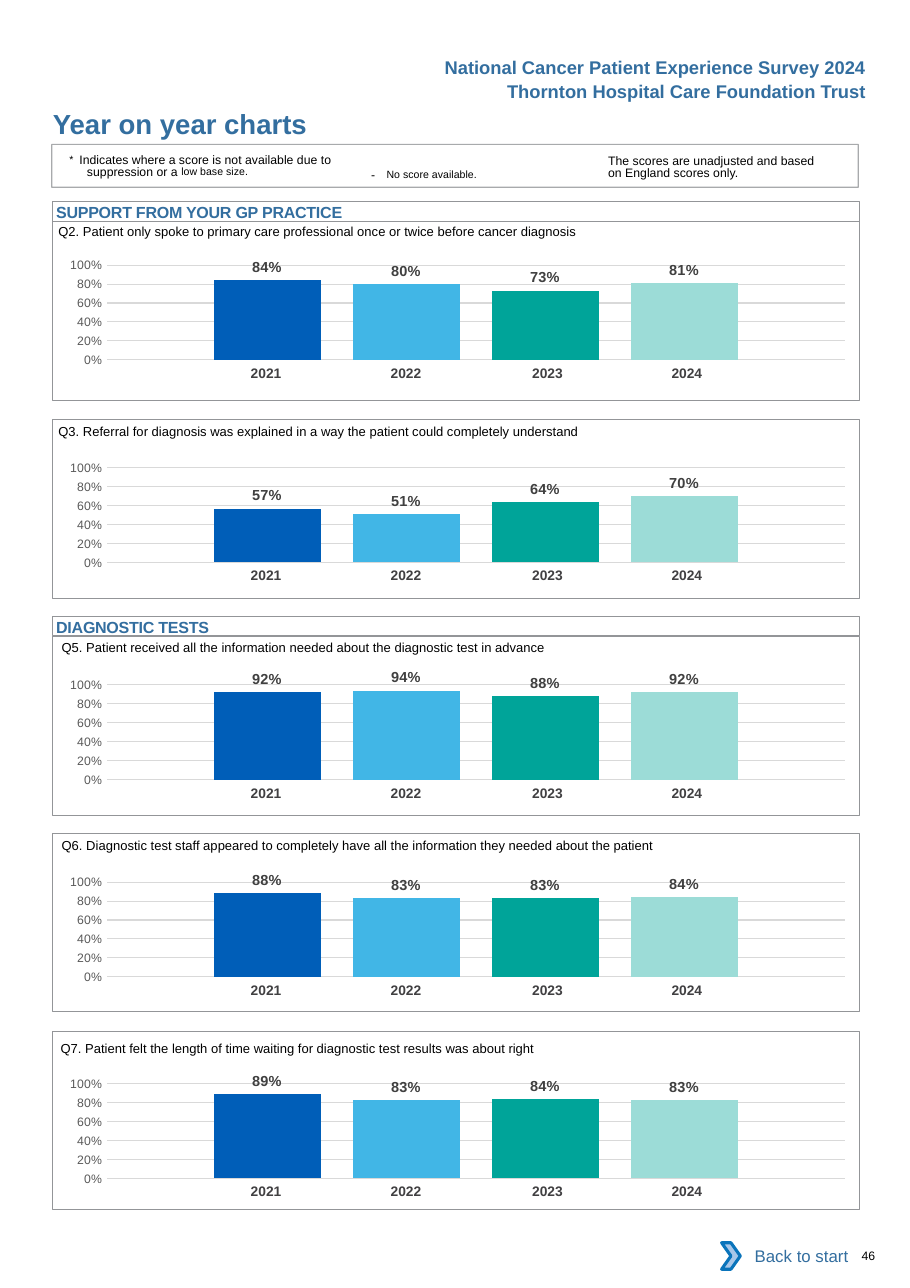
from pptx import Presentation
from pptx.chart.data import CategoryChartData
from pptx.dml.color import RGBColor
from pptx.enum import chart as charts, shapes, text
from pptx.oxml import parse_xml
from pptx.oxml.ns import nsdecls, qn
from pptx.util import Inches, Pt
from lxml import etree

COLOURS = {"heading": "336E9F", "body": "000000", "frame": "939598", "year": "414042",
           "axis": "595959", "score": "404040", "grid": "D9D9D9", "paper": "FFFFFF",
           "arrow": "A8C7E9", "arrow edge": "0A74BB"}
YEARS = {"2021": "005EB8", "2022": "41B6E6", "2023": "00A499", "2024": "9CDCD7"}
YEAR_WIDTHS = [1.27, 1.27, 1.34, 1.27]
YEAR_RIGHT_MARGINS = [0, 0, 0.04, 0.12]
PLOT = {"x": 0.079, "y": 0.145, "w": 0.915, "h": 0.666}
PANEL_LEFT, PANEL_WIDTH, PANEL_HEIGHT = 0.48, 7.32, 1.62
CHART_BOX = (0.39, 7.32, 1.29)
YEARS_LEFT, YEARS_DROP, YEARS_HEIGHT = 1.73, 1.05, 0.27
NO_GRID_STYLE = "{2D5ABB26-0587-4C30-8999-92F81FD0307C}"

SECTIONS = [("SUPPORT FROM YOUR GP PRACTICE", 1.83), ("DIAGNOSTIC TESTS", 5.59)]
QUESTIONS = [
    ("Q2. Patient only spoke to primary care professional once or twice before cancer diagnosis",
     (0.53, 1.94), 2.01, 2.22, [0.84, 0.80, 0.73, 0.81]),
    ("Q3. Referral for diagnosis was explained in a way the patient could completely understand",
     (0.53, 3.75), 3.81, 4.06, [0.57, 0.51, 0.64, 0.70]),
    ("Q5. Patient received all the information needed about the diagnostic test in advance",
     (0.56, 5.71), 5.78, 6.03, [0.92, 0.94, 0.88, 0.92]),
    ("Q6. Diagnostic test staff appeared to completely have all the information they needed "
     "about the patient", (0.56, 7.51), 7.56, 7.82, [0.88, 0.83, 0.83, 0.84]),
    ("Q7. Patient felt the length of time waiting for diagnostic test results was about right",
     (0.55, 9.35), 9.36, 9.65, [0.89, 0.83, 0.84, 0.83]),
]
RIGHT_HEADINGS = [("National Cancer Patient Experience Survey 2024", 0.46),
                  ("Thornton Hospital Care Foundation Trust", 0.68)]
SUPPRESSED_NOTE = [("*  ", 12, 3), ("Indicates where a score is not available due to "
                   "suppression or a ", 8, 0), ("low base size.", 12, 7)]
MISSING_NOTE = [("- ", 8, 0), ("No score available.", 12, 3)]
UNADJUSTED_NOTE = [("The scores are unadjusted and based on England scores only.", 8, 0)]


def rgb(name):
    """Return the colour for a palette name or a hex string."""
    return RGBColor.from_string(COLOURS.get(name, name))


def style(font, size, colour, bold=False):
    """Apply the page typeface to a font."""
    font.name, font.size, font.bold = "Arial", Pt(size), bold
    font.color.rgb = rgb(colour)


def write(frame, runs, colour="body", bold=False, align=text.PP_ALIGN.LEFT,
          margins=(0, 0, 0, 0), leading=None):
    """Fill a text frame with one paragraph of (text, size, raise) runs."""
    frame.word_wrap = True
    frame.margin_left, frame.margin_top, frame.margin_right, frame.margin_bottom = map(
        Inches, margins)
    line = frame.paragraphs[0]
    line.alignment = align
    if leading:
        line.line_spacing = Pt(leading)
    for words, size, lift in runs:
        run = line.add_run()
        run.text = words
        style(run.font, size, colour, bold)
        if lift:
            run.font._element.set("baseline", str(lift * 1000))
    return line


def add_words(slide, box, runs, **options):
    """Add a text box holding one paragraph."""
    return write(slide.shapes.add_textbox(*map(Inches, box)).text_frame, runs, **options)


def add_box(slide, box, edge=None, weight=0.5, fill=None, kind=shapes.MSO_SHAPE.RECTANGLE):
    """Add a flat preset shape."""
    shape = slide.shapes.add_shape(kind, *map(Inches, box))
    shape.shadow.inherit = False
    if fill:
        shape.fill.solid()
        shape.fill.fore_color.rgb = rgb(fill)
    else:
        shape.fill.background()
    if edge:
        shape.line.color.rgb = rgb(edge)
        shape.line.width = Pt(weight)
    else:
        shape.line.fill.background()
    return shape


def add_scores(slide, top, scores):
    """Add the column chart of one question."""
    data = CategoryChartData(number_format="0%")
    data.categories = ["1"]
    for year, score in zip(YEARS, scores):
        data.add_series(year, [score])
    left, width, height = CHART_BOX
    chart = slide.shapes.add_chart(charts.XL_CHART_TYPE.COLUMN_CLUSTERED, Inches(left),
                                   Inches(top), Inches(width), Inches(height), data).chart
    chart.has_legend = chart.has_title = False
    style(chart.font, 8, "axis")
    chart.category_axis.visible = False
    axis = chart.value_axis
    axis.minimum_scale, axis.maximum_scale, axis.major_unit = 0, 1, 0.2
    axis.major_tick_mark = axis.minor_tick_mark = charts.XL_TICK_MARK.NONE
    axis.format.line.fill.background()
    axis.major_gridlines.format.line.color.rgb = rgb("grid")
    axis.major_gridlines.format.line.width = Pt(0.75)
    axis.tick_labels.number_format, axis.tick_labels.number_format_is_linked = "0%", False
    style(axis.tick_labels.font, 8, "axis")
    plot = chart.plots[0]
    plot.gap_width, plot.overlap, plot.vary_by_categories = 200, -30, False
    for series, colour in zip(plot.series, YEARS.values()):
        series.format.fill.solid()
        series.format.fill.fore_color.rgb = rgb(colour)
        labels = series.data_labels
        labels.show_value = True
        labels.position = charts.XL_LABEL_POSITION.OUTSIDE_END
        labels.number_format, labels.number_format_is_linked = "0%", False
        style(labels.font, 9.5, "score", True)
    area = chart._chartSpace.find(".//" + qn("c:plotArea"))
    for old in area.findall(qn("c:layout")):
        area.remove(old)
    places = "".join(f'<c:{side}Mode val="edge"/>' for side in "xy")
    places += "".join(f'<c:{side} val="{share}"/>' for side, share in PLOT.items())
    area.insert(0, parse_xml(f'<c:layout {nsdecls("c")}><c:manualLayout><c:layoutTarget '
                             f'val="inner"/>{places}</c:manualLayout></c:layout>'))


def add_years(slide, top):
    """Add the row of years under a chart."""
    frame = slide.shapes.add_table(1, len(YEARS), Inches(YEARS_LEFT), Inches(top),
                                   Inches(sum(YEAR_WIDTHS)), Inches(YEARS_HEIGHT))
    table = frame.table
    table.first_row = table.horz_banding = False
    frame._element.find(".//" + qn("a:tableStyleId")).text = NO_GRID_STYLE
    for column, (year, width, right) in enumerate(zip(YEARS, YEAR_WIDTHS, YEAR_RIGHT_MARGINS)):
        table.columns[column].width = Inches(width)
        cell = table.cell(0, column)
        cell.fill.background()
        cell.margin_left, cell.margin_right = Inches(0.1), Inches(right)
        cell.margin_top = cell.margin_bottom = Inches(0.05)
        cell.text_frame.text = year
        line = cell.text_frame.paragraphs[0]
        line.alignment = text.PP_ALIGN.CENTER
        style(line.runs[0].font, 9, "year", True)


def main():
    """Build the year on year page."""
    deck = Presentation()
    deck.slide_width, deck.slide_height = Inches(8.26), Inches(11.69)
    slide = deck.slides.add_slide(deck.slide_layouts[6])

    for heading, top in RIGHT_HEADINGS:
        add_words(slide, (3.46, top, 4.5, 0.3), [(heading, 12, 0)], colour="heading", bold=True,
                  align=text.PP_ALIGN.RIGHT, margins=(0.1, 0.05, 0.1, 0.05))
    add_words(slide, (0.48, 0.97, 4.5, 0.3), [("Year on year charts", 18, 0)],
              colour="heading", bold=True)

    notes = add_box(slide, (0.47, 1.31, PANEL_WIDTH, 0.39), "frame", 0.75)
    tint = notes.line._ln.find(".//" + qn("a:srgbClr"))
    etree.SubElement(tint, qn("a:alpha")).set("val", "80000")
    suppressed = add_words(slide, (0.63, 1.38, 2.4, 0.27), SUPPRESSED_NOTE,
                           margins=(0, 0.03, 0, 0), leading=8.1)
    suppressed._p.get_or_add_pPr().set("marL", str(Inches(0.16)))
    suppressed._p.get_or_add_pPr().set("indent", str(-Inches(0.16)))
    missing = add_words(slide, (3.27, 1.41, 1.83, 0.24), MISSING_NOTE,
                        margins=(0.1, 0.05, 0.1, 0.05))
    missing.runs[0].font._element.set("spc", "260")
    add_words(slide, (5.52, 1.38, 2.01, 0.27), UNADJUSTED_NOTE, margins=(0, 0.03, 0, 0),
              leading=8.1)

    for section, top in SECTIONS:
        bar = add_box(slide, (PANEL_LEFT, top, PANEL_WIDTH, 0.18), "frame")
        bar.text_frame.vertical_anchor = text.MSO_ANCHOR.TOP
        label = write(bar.text_frame, [(section, 10.5, 0)], "heading", True,
                      margins=(0.03, 0.01, 0, 0))
        label.runs[0].font._element.set("spc", "-14")

    for question, (left, top), panel_top, chart_top, scores in QUESTIONS:
        add_words(slide, (left, top, 7.2, 0.24), [(question, 8.5, 0)], margins=(0, 0.09, 0, 0))
        add_years(slide, chart_top + YEARS_DROP)
        add_scores(slide, chart_top, scores)
        add_box(slide, (PANEL_LEFT, panel_top, PANEL_WIDTH, PANEL_HEIGHT), "frame")

    back = add_box(slide, (6.62, 11.19, 1.18, 0.42), fill="paper")
    back.text_frame.vertical_anchor = text.MSO_ANCHOR.MIDDLE
    write(back.text_frame, [("Back to start", 11, 0)], "heading", align=text.PP_ALIGN.RIGHT,
          margins=(0.1, 0.05, 0.1, 0.05))
    add_box(slide, (6.55, 11.28, 0.17, 0.24), "arrow edge", 2, "arrow",
            shapes.MSO_SHAPE.CHEVRON)
    add_words(slide, (7.82, 11.33, 0.41, 0.13), [("46", 8, 0)])
    deck.save("out.pptx")


if __name__ == "__main__":
    main()
